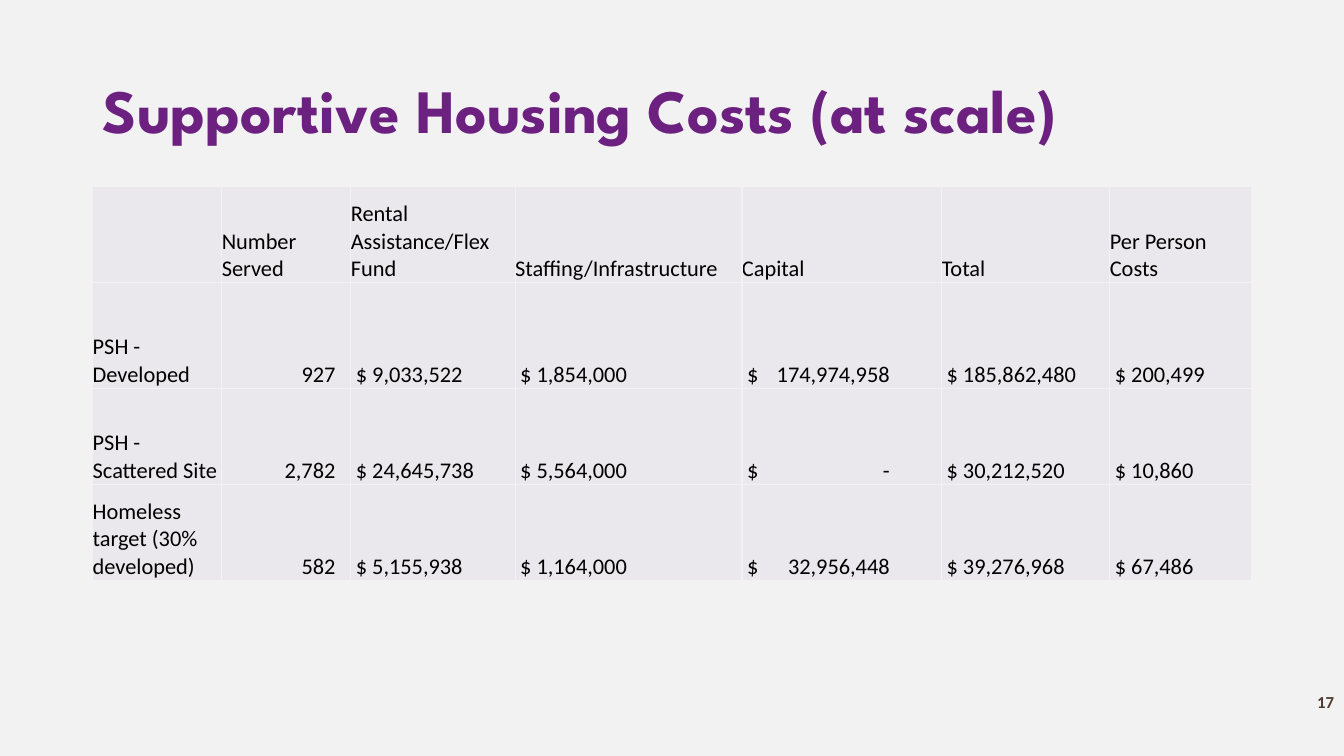
from lxml.etree import SubElement
from pptx import Presentation
from pptx.dml.color import RGBColor
from pptx.enum.text import MSO_ANCHOR, PP_ALIGN
from pptx.oxml.ns import qn
from pptx.util import Pt

TITLE = "Supportive Housing Costs (at scale)"
PAGE_NUMBER = "17"
HEADINGS = ("", "Number Served", "Rental Assistance/Flex Fund",
            "Staffing/Infrastructure", "Capital", "Total", "Per Person Costs")
PROGRAMS = [
    ("PSH - Developed", "927", "$ 9,033,522", "$ 1,854,000",
     "$\t174,974,958", "$ 185,862,480", "$ 200,499"),
    ("PSH - Scattered Site", "2,782", "$ 24,645,738", "$ 5,564,000",
     "$\t-", "$ 30,212,520", "$ 10,860"),
    ("Homeless target (30% developed)", "582", "$ 5,155,938", "$ 1,164,000",
     "$\t32,956,448", "$ 39,276,968", "$ 67,486"),
]
COLORS = {"background": "F2F2F2", "cell": "EBE8ED", "title": "6C2080",
          "text": "000000", "page": "4E3B30"}

LEFT, WIDTH = 66.24, 828
COLUMN_WIDTHS = (92.2, 92.2, 117.4, 162, 142.6, 120.2, 101.4)
ROW_HEIGHTS = (68.6, 75.6, 68.6, 68.6)
SERVED_COLUMN = 1
SERVED_INSET, MONEY_INSET, CAPITAL_TAB = 11, 3.6, 102


def color(name):
    return RGBColor.from_string(COLORS[name])


def set_font(paragraph, face, size, color_name, bold=False):
    font = paragraph.font
    font.name, font.size, font.bold = face, Pt(size), bold
    font.color.rgb = color(color_name)


def add_borders(cell):
    properties = cell._tc.get_or_add_tcPr()
    for side in ("lnL", "lnR", "lnT", "lnB"):
        line = SubElement(properties, qn(f"a:{side}"), w=str(Pt(1)))
        fill = SubElement(line, qn("a:solidFill"))
        SubElement(fill, qn("a:srgbClr"), val=COLORS["background"])


def add_right_tab(paragraph, position):
    tabs = SubElement(paragraph._p.get_or_add_pPr(), qn("a:tabLst"))
    SubElement(tabs, qn("a:tab"), pos=str(Pt(position)), algn="r")


def fill_cell(cell, entry, is_heading, column):
    add_borders(cell)
    cell.fill.solid()
    cell.fill.fore_color.rgb = color("cell")
    cell.vertical_anchor = MSO_ANCHOR.BOTTOM
    cell.margin_left = cell.margin_right = cell.margin_top = cell.margin_bottom = 0
    cell.text = entry
    paragraph = cell.text_frame.paragraphs[0]
    if "\t" in entry:
        add_right_tab(paragraph, CAPITAL_TAB)
    if not is_heading and column == SERVED_COLUMN:
        paragraph.alignment = PP_ALIGN.RIGHT
        cell.margin_right = Pt(SERVED_INSET)
    elif not is_heading and column > SERVED_COLUMN:
        cell.margin_left = Pt(MONEY_INSET)
    set_font(paragraph, "Calibri", 16, "text")


def add_cost_table(slide):
    rows = [HEADINGS, *PROGRAMS]
    table = slide.shapes.add_table(
        len(rows), len(HEADINGS), Pt(LEFT), Pt(133.2), Pt(WIDTH), Pt(sum(ROW_HEIGHTS))).table
    table.horz_banding = False
    for column, width in zip(table.columns, COLUMN_WIDTHS):
        column.width = Pt(width)
    for index, (entries, height) in enumerate(zip(rows, ROW_HEIGHTS)):
        table.rows[index].height = Pt(height)
        for column, entry in enumerate(entries):
            fill_cell(table.cell(index, column), entry, index == 0, column)


def main():
    deck = Presentation()
    deck.slide_width, deck.slide_height = Pt(960), Pt(540)
    slide = deck.slides.add_slide(deck.slide_layouts[5])
    slide.background.fill.solid()
    slide.background.fill.fore_color.rgb = color("background")

    title = slide.shapes.title
    title.left, title.top, title.width, title.height = Pt(LEFT), Pt(28.8), Pt(WIDTH), Pt(104.4)
    title.text_frame.text = TITLE
    title.text_frame.vertical_anchor = MSO_ANCHOR.MIDDLE
    heading = title.text_frame.paragraphs[0]
    heading.alignment = PP_ALIGN.LEFT
    heading.line_spacing = 0.9
    set_font(heading, "League Spartan", 44, "title", bold=True)

    add_cost_table(slide)

    page = slide.shapes.add_textbox(Pt(825.6), Pt(490.3), Pt(134.4), Pt(28.8)).text_frame
    page.word_wrap = True
    page.text = PAGE_NUMBER
    page.paragraphs[0].alignment = PP_ALIGN.RIGHT
    set_font(page.paragraphs[0], "Calibri", 12, "page", bold=True)

    deck.save("out.pptx")


if __name__ == "__main__":
    main()
